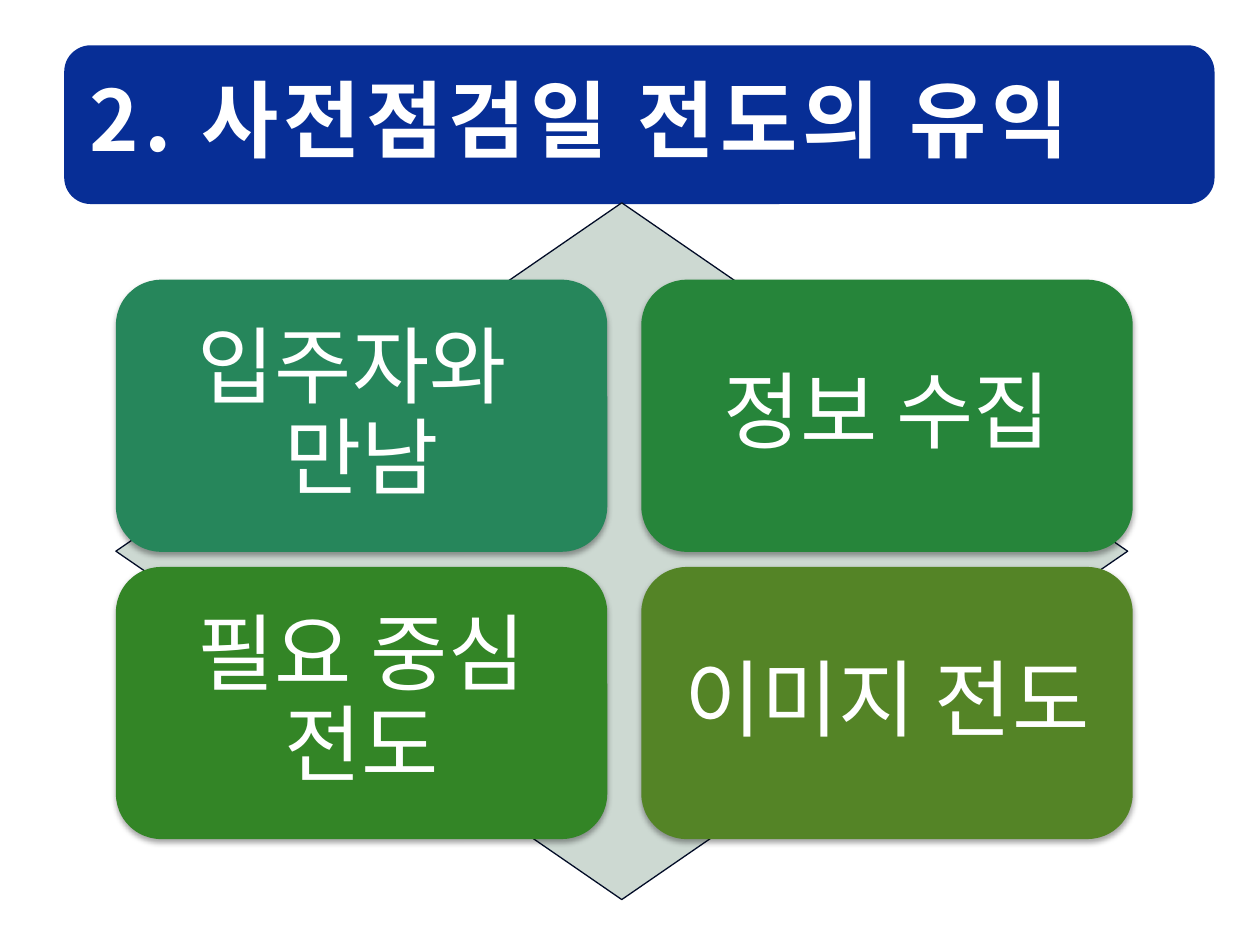
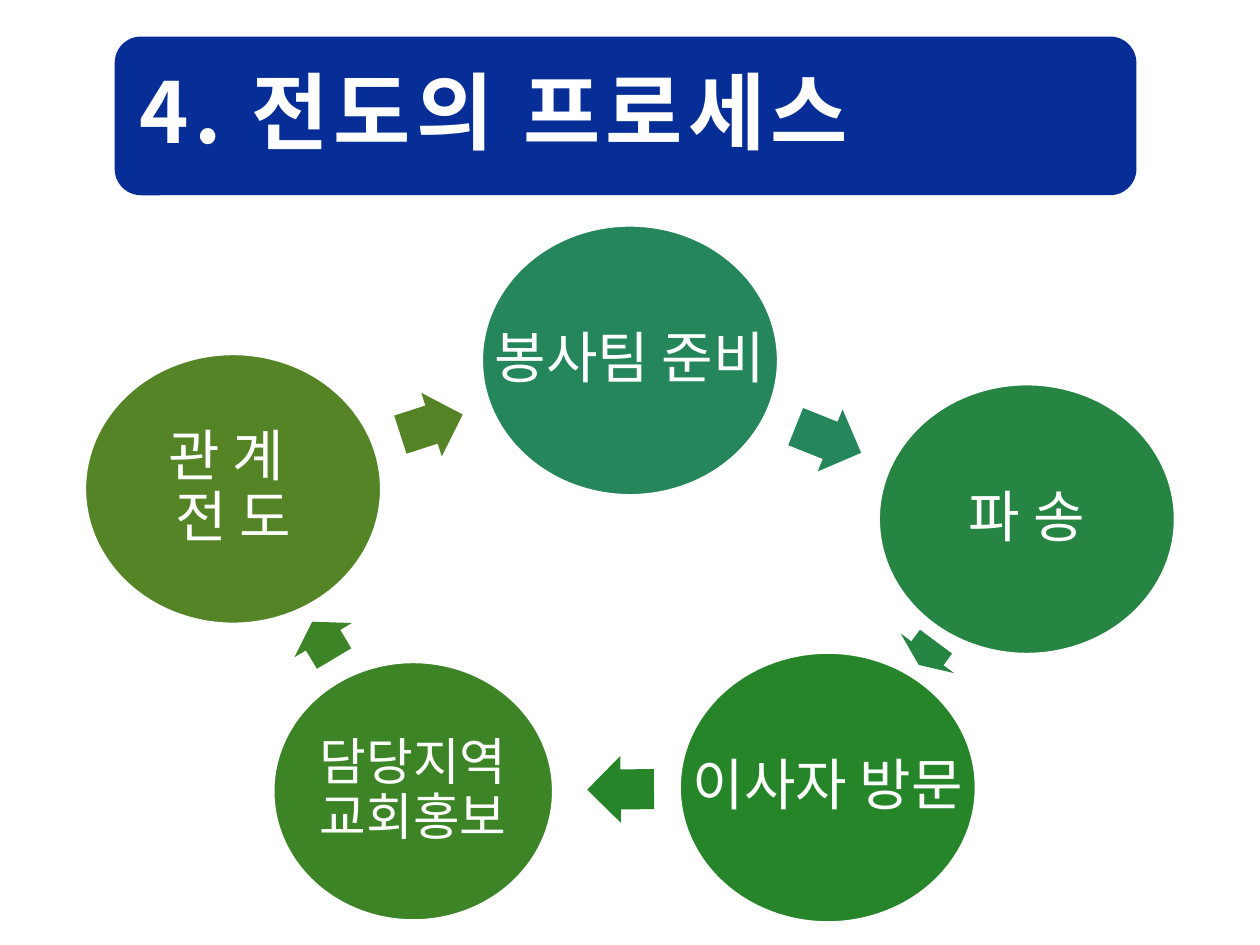
"""Builds two slides on the benefits and the process of outreach."""
import math

from lxml import etree
from pptx import Presentation
from pptx import util as u
from pptx.dml.color import RGBColor
from pptx.enum import shapes, text
from pptx.oxml import parse_xml
from pptx.oxml.ns import nsdecls, qn

FONT = "Noto Sans CJK KR"
WHITE, NAVY, INK, PALE = "FFFFFF", "072E96", "020C27", "CDD9D2"
SHADOW = (
    f'<a:effectLst {nsdecls("a")}><a:outerShdw blurRad="{u.Pt(3.1)}" dist="{u.Pt(1.8)}" '
    'dir="5400000" rotWithShape="0"><a:srgbClr val="000000"><a:alpha val="35000"/>'
    '</a:srgbClr></a:outerShdw></a:effectLst>'
)


def add_filled(slide, kind, box, fill, line=None, line_width=1):
    shape = slide.shapes.add_shape(kind, *map(u.Inches, box))
    shape.shadow.inherit = False
    shape.fill.solid()
    shape.fill.fore_color.rgb = RGBColor.from_string(fill)
    if line:
        shape.line.color.rgb = RGBColor.from_string(line)
        shape.line.width = u.Pt(line_width)
    else:
        shape.line.fill.background()
    return shape


def write(shape, wording, size, inset, align=text.PP_ALIGN.CENTER, bold=False, tracking=0):
    frame = shape.text_frame
    frame.text = wording
    frame.word_wrap = False
    frame.auto_size = text.MSO_AUTO_SIZE.NONE
    frame.vertical_anchor = text.MSO_ANCHOR.MIDDLE
    frame.margin_left = frame.margin_right = u.Inches(inset)
    frame.margin_top = frame.margin_bottom = u.Inches(inset)
    paragraph = frame.paragraphs[0]
    paragraph.alignment = align
    paragraph.line_spacing = 0.9
    after = etree.SubElement(paragraph._p.get_or_add_pPr(), qn("a:spcAft"))
    etree.SubElement(after, qn("a:spcPct"), val="35000")
    font = paragraph.font
    font.size, font.bold, font.name = u.Pt(size), bold, FONT
    font.color.rgb = RGBColor.from_string(WHITE)
    etree.SubElement(font._rPr, qn("a:ea"), typeface=FONT)
    font._rPr.set("spc", str(tracking * 100))


presentation = Presentation()
presentation.slide_width, presentation.slide_height = u.Inches(10), u.Inches(7.5)

titles = [
    ("2. 사전점검일 전도의 유익", (0.51, 0.36, 9.13, 1.26)),
    ("4. 전도의 프로세스", (0.91, 0.29, 8.11, 1.26)),
]
for wording, box in titles:
    slide = presentation.slides.add_slide(presentation.slide_layouts[5])
    band = add_filled(slide, shapes.MSO_SHAPE.ROUNDED_RECTANGLE, box, NAVY)
    title = slide.shapes.title
    title._element.addprevious(band._element)
    title.left, title.top, title.width, title.height = map(u.Inches, box)
    write(title, wording, 48, 0.2, text.PP_ALIGN.LEFT, bold=True, tracking=3)
    title.text_frame.word_wrap = True

benefits_slide, process_slide = presentation.slides

add_filled(benefits_slide, shapes.MSO_SHAPE.DIAMOND, (0.92, 1.61, 8.03, 5.53), PALE, INK, 0.75)
benefits = [
    ("입주자와 \v만남", "26865B"),
    ("정보 수집", "26853A"),
    ("필요 중심\v전도", "338526"),
    ("이미지 전도", "548426"),
]
for index, (wording, fill) in enumerate(benefits):
    row, column = divmod(index, 2)
    box = (0.92 + column * 4.17, 2.22 + row * 2.28, 3.9, 2.16)
    card = add_filled(benefits_slide, shapes.MSO_SHAPE.ROUNDED_RECTANGLE, box, fill)
    card._element.spPr.replace(card._element.spPr.find(qn("a:effectLst")), parse_xml(SHADOW))
    write(card, wording, 48, 0.2)

large, small = (2.36, 2.15, 32), (2.23, 2.06, 29)
steps = [
    ("봉사팀 준비", 5, 2.86, large, "26865B", 0.56),
    ("파 송", 8.15, 4.12, large, "268542", 0.23),
    ("이사자 방문", 6.57, 6.25, large, "268529", 0.53),
    ("담당지역\v교회홍보", 3.28, 6.28, small, "3C8426", 0.34),
    ("관 계 \v전 도", 1.85, 3.88, large, "548426", 0.52),
]
arrow_height = 0.53
for index, (wording, x, y, (width, height, size), fill, arrow_length) in enumerate(steps):
    box = (x - width / 2, y - height / 2, width, height)
    circle = add_filled(process_slide, shapes.MSO_SHAPE.OVAL, box, fill, WHITE, 2)
    write(circle, wording, size, 0.04)

    next_x, next_y = steps[(index + 1) % len(steps)][1:3]
    box = ((x + next_x - arrow_length) / 2, (y + next_y - arrow_height) / 2,
           arrow_length, arrow_height)
    arrow = add_filled(process_slide, shapes.MSO_SHAPE.RIGHT_ARROW, box, fill)
    arrow.adjustments[0], arrow.adjustments[1] = 0.6, 0.5
    arrow.rotation = math.degrees(math.atan2(next_y - y, next_x - x))

presentation.save("out.pptx")
